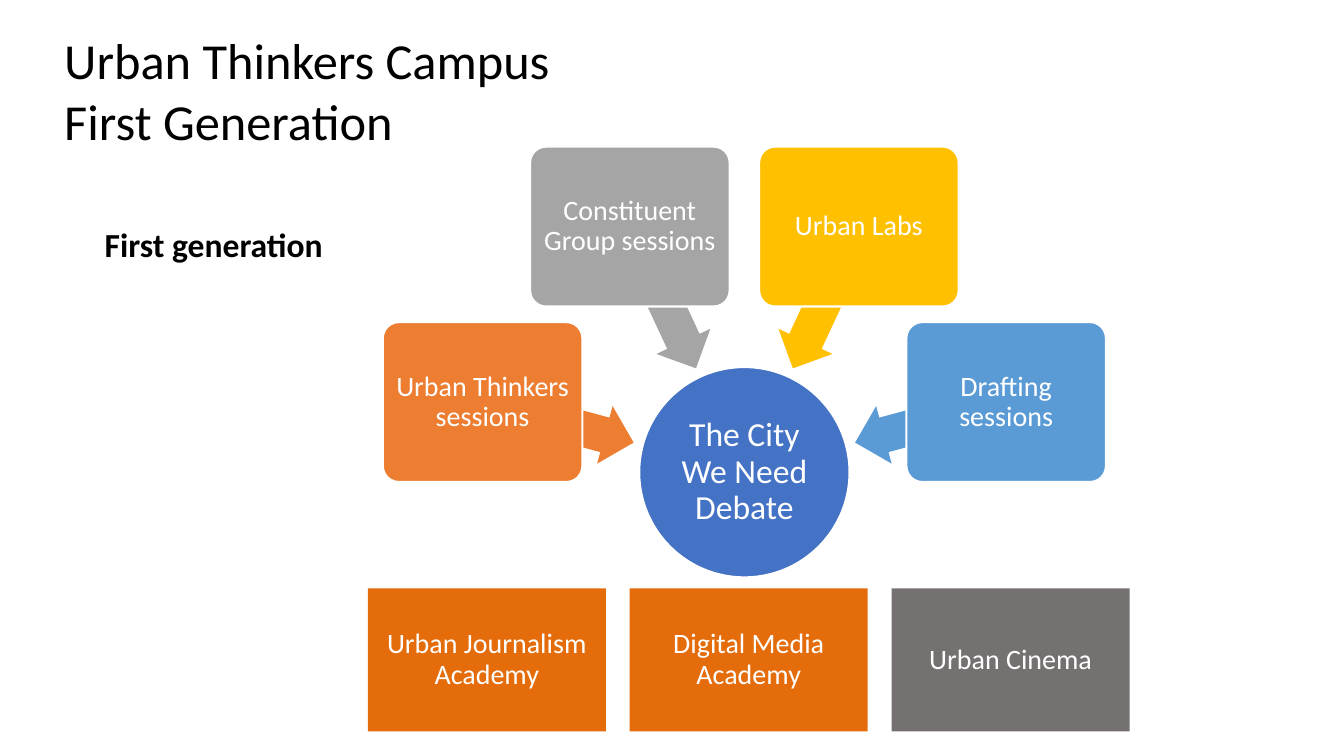
from math import cos, sin, radians
from pptx import Presentation
from pptx.util import Cm, Pt
from pptx.dml.color import RGBColor as Rgb
from pptx.enum.shapes import MSO_SHAPE as Kind
from pptx.enum.text import MSO_ANCHOR as Anchor, PP_ALIGN as Align

HUES = {"white": "FFFFFF", "black": "000000", "blue": "4472C4",
        "orange": "ED7D31", "gray": "A5A5A5", "gold": "FFC000",
        "sky": "5B9BD5", "rust": "E46C0A", "stone": "767171"}
SPOKES = [("Urban Thinkers sessions", "orange"),
          ("Constituent Group sessions", "gray"),
          ("Urban Labs", "gold"),
          ("Drafting sessions", "sky")]
ROOMS = [("Urban Journalism Academy", "rust"),
         ("Digital Media Academy", "rust"),
         ("Urban Cinema", "stone")]


def hue(name):
    return Rgb.from_string(HUES[name])


def write(shape, text, size=20, color="white", bold=False, align=Align.CENTER,
          anchor=Anchor.MIDDLE, space=0.9, pad=(0.1, 0.1)):
    frame = shape.text_frame
    frame.word_wrap = True
    frame.vertical_anchor = anchor
    frame.margin_left = frame.margin_right = Cm(pad[0])
    frame.margin_top = frame.margin_bottom = Cm(pad[1])
    for i, line in enumerate(text.split("\n")):
        para = frame.add_paragraph() if i else frame.paragraphs[0]
        para.alignment = align
        para.line_spacing = space
        run = para.add_run()
        run.text = line
        font = run.font
        font.name, font.size, font.bold = "Calibri", Pt(size), bold
        font.color.rgb = hue(color)


def block(slide, kind, box, fill, edge=False):
    shape = slide.shapes.add_shape(kind, *map(Cm, box))
    shape.shadow.inherit = False
    shape.fill.solid()
    shape.fill.fore_color.rgb = hue(fill)
    if edge:
        shape.line.color.rgb = hue("white")
        shape.line.width = Pt(1.5)
    else:
        shape.line.fill.background()
    return shape


def around(x, y, wide, high):
    return x - wide / 2, y - high / 2, wide, high


def head(slide, box):
    x, y, wide, high = box
    sub = slide.shapes.add_textbox(Cm(x + 1.02), Cm(y + 4.01), Cm(10.77), Cm(3.18))
    write(sub, "First generation", size=24, color="black", bold=True,
          align=Align.LEFT, pad=(0.25, 0.13))
    title = slide.shapes.add_textbox(*map(Cm, box))
    write(title, "Urban Thinkers Campus\nFirst Generation", size=36, color="black",
          align=Align.LEFT, anchor=Anchor.TOP, space=1.0, pad=(0.25, 0.13))


def wheel(slide, box):
    x, y, wide, high = box
    mid, low = x + wide / 2, y + high - 2.65
    hub = block(slide, Kind.OVAL, around(mid, low, 5.3, 5.3), "blue", edge=True)
    write(hub, "The City We Need Debate", size=24, pad=(0.05, 0.05))
    for i, (text, fill) in enumerate(SPOKES):
        turn = 195 + 50 * i
        dx, dy = cos(radians(turn)), sin(radians(turn))
        spot = around(mid + 4.86 * dx, low + 4.86 * dy, 3.94, 1.5)
        arrow = block(slide, Kind.LEFT_ARROW, spot, fill)
        arrow.adjustments[0], arrow.adjustments[1] = 0.6, 0.5
        arrow.rotation = turn
        spot = around(mid + 6.83 * dx, low + 6.83 * dy, 5.03, 4.03)
        card = block(slide, Kind.ROUNDED_RECTANGLE, spot, fill, edge=True)
        card.adjustments[0] = 0.1
        write(card, text)


def row(slide, box, gap=0.6):
    x, y, wide, high = box
    each = (wide - gap * (len(ROOMS) - 1)) / len(ROOMS)
    for i, (text, fill) in enumerate(ROOMS):
        room = block(slide, Kind.RECTANGLE, (x + i * (each + gap), y, each, high), fill)
        write(room, text, pad=(0.2, 0.2))


def main():
    deck = Presentation()
    deck.slide_width, deck.slide_height = Cm(33.87), Cm(19.05)
    slide = deck.slides.add_slide(deck.slide_layouts[6])
    wheel(slide, (9.64, 3.7, 18.24, 10.85))
    row(slide, (9.27, 14.83, 19.2, 3.6))
    head(slide, (1.37, 0.61, 32.5, 3.33))
    deck.save("out.pptx")


if __name__ == "__main__":
    main()
